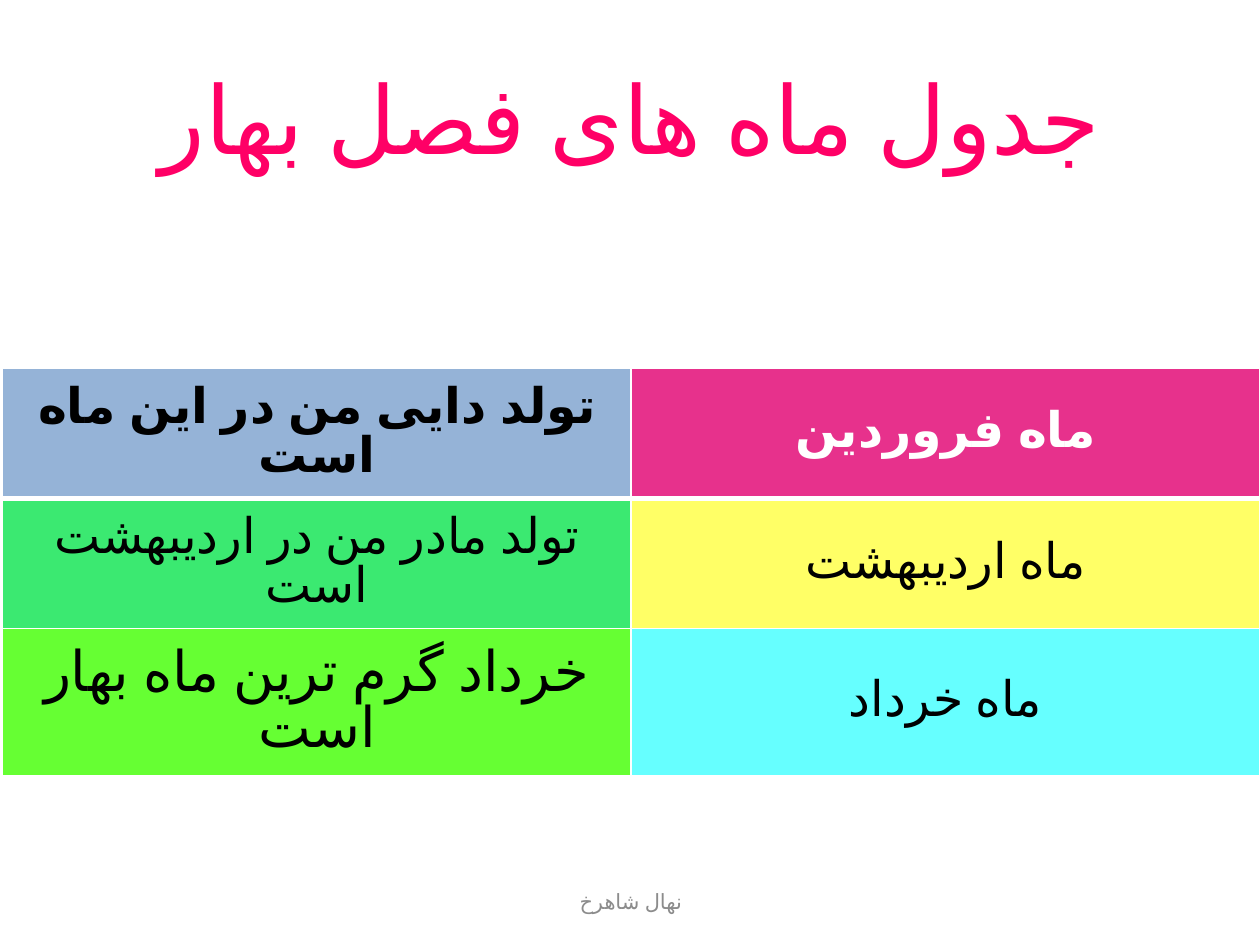
from lxml.etree import SubElement
from pptx import Presentation
from pptx.dml.color import RGBColor
from pptx.enum.text import MSO_ANCHOR, PP_ALIGN
from pptx.oxml.ns import qn
from pptx.util import Inches, Pt

HUES = {
    "rose": "FF0066", "black": "000000", "white": "FFFFFF", "gray": "8C8C8C",
    "blue": "95B3D7", "pink": "E7318C", "green": "3BE971",
    "yellow": "FFFF66", "lime": "66FF33", "cyan": "66FFFF",
}
ROWS = [
    [("تولد دایی من در این ماه است", "blue", "black", 28),
     ("ماه فروردین", "pink", "white", 28)],
    [("تولد مادر من در اردیبهشت است", "green", "black", 28),
     ("ماه اردیبهشت", "yellow", "black", 28)],
    [("خرداد گرم ترین ماه بهار است", "lime", "black", 32),
     ("ماه خرداد", "cyan", "black", 28)],
]


def tint(name):
    """Return the named colour."""
    return RGBColor.from_string(HUES[name])


def write(frame, text, size=28, hue="black", bold=False):
    """Put one centred right-to-left line in a text frame."""
    frame.word_wrap = True
    para = frame.paragraphs[0]
    para.alignment = PP_ALIGN.CENTER
    para._p.get_or_add_pPr().set("rtl", "1")
    run = para.add_run()
    run.text = text
    font = run.font
    font.name, font.size, font.bold = "Calibri", Pt(size), bold
    font.color.rgb = tint(hue)
    run._r.get_or_add_rPr().set("lang", "fa-IR")


def add_label(slide, box, text, **form):
    """Add a text box centred on its middle."""
    frame = slide.shapes.add_textbox(*map(Inches, box)).text_frame
    frame.vertical_anchor = MSO_ANCHOR.MIDDLE
    write(frame, text, **form)


def edge(cell, side, width):
    """Draw one white cell border."""
    line = SubElement(cell._tc.get_or_add_tcPr(), qn(f"a:{side}"), w=str(Pt(width)))
    fill = SubElement(line, qn("a:solidFill"))
    SubElement(fill, qn("a:srgbClr"), val=HUES["white"])


def add_months(slide):
    """Add the table of spring months."""
    box = map(Inches, (0.02, 2.92, 9.98, 3.08))
    table = slide.shapes.add_table(len(ROWS), 2, *box).table
    for i, row in enumerate(ROWS):
        for j, (text, fill, hue, size) in enumerate(row):
            cell = table.cell(i, j)
            cell.vertical_anchor = MSO_ANCHOR.MIDDLE
            for side in ("lnL", "lnR", "lnT", "lnB"):
                thick = (i, side) in ((0, "lnB"), (1, "lnT"))
                edge(cell, side, 3 if thick else 1)
            cell.fill.solid()
            cell.fill.fore_color.rgb = tint(fill)
            write(cell.text_frame, text, size=size, hue=hue, bold=i == 0)


def main():
    """Build and save the slide."""
    deck = Presentation()
    deck.slide_width, deck.slide_height = Inches(10), Inches(7.5)
    slide = deck.slides.add_slide(deck.slide_layouts[6])
    add_label(slide, (0.5, 0.3, 9, 1.25), "جدول ماه های فصل بهار", size=54, hue="rose")
    add_months(slide)
    add_label(slide, (3.42, 6.95, 3.17, 0.4), "نهال شاهرخ", size=12, hue="gray")
    deck.save("out.pptx")


if __name__ == "__main__":
    main()
